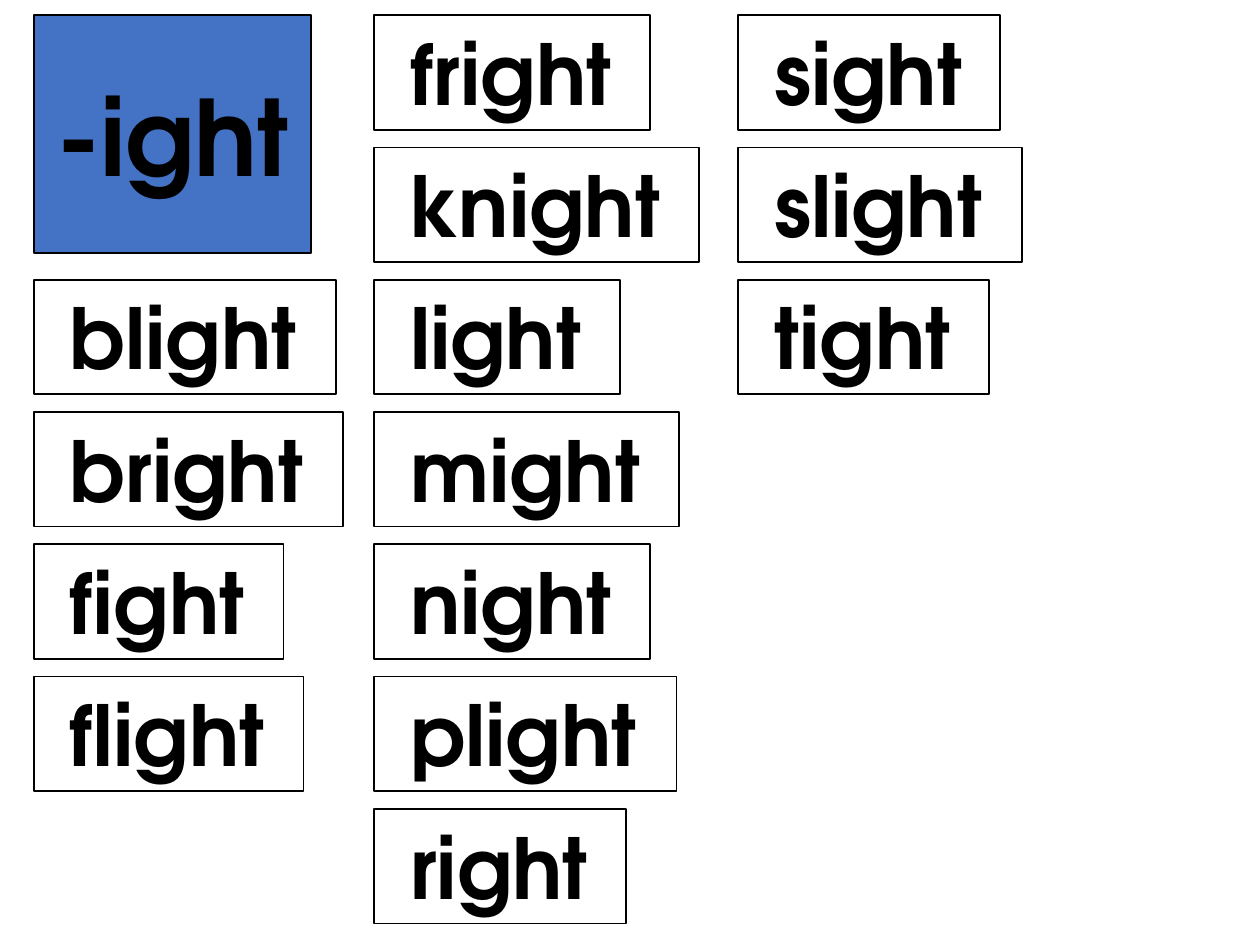
from dataclasses import dataclass

from pptx import Presentation
from pptx.dml.color import RGBColor
from pptx.enum import shapes, text
from pptx.util import Inches, Pt


@dataclass(frozen=True)
class Theme:
    font: str = "TeX Gyre Adventor"
    ink: str = "000000"
    card: str = "FFFFFF"
    accent: str = "4472C4"
    word_size: int = 48
    title_size: int = 60
    line_width: int = 1


THEME = Theme()

# Card grid, in inches
TOP, ROW_STEP, CARD_HEIGHT = 0.12, 1.05, 0.91
LEFT = 0.27

# Each column: left edge, first row, words with card widths
COLUMNS = [
    (5.86, 0, [("sight", 2.08), ("slight", 2.25), ("tight", 1.99)]),
    (2.97, 0, [("fright", 2.19), ("knight", 2.58), ("light", 1.95),
               ("might", 2.42), ("night", 2.19), ("plight", 2.4),
               ("right", 2)]),
    (LEFT, 2, [("blight", 2.4), ("bright", 2.45), ("fight", 1.98),
               ("flight", 2.14)]),
]


def set_text(sp, content, *, size, align, anchor, wrap, auto_size):
    tf = sp.text_frame
    tf.word_wrap = wrap
    tf.auto_size = auto_size
    tf.vertical_anchor = anchor
    p = tf.paragraphs[0]
    p.alignment = align
    r = p.add_run()
    r.text = content
    r.font.name = THEME.font
    r.font.size = Pt(size)
    r.font.bold = True
    r.font.color.rgb = RGBColor.from_string(THEME.ink)


def add_box(s, left, top, width, height, fill):
    sp = s.shapes.add_shape(shapes.MSO_SHAPE.RECTANGLE, Inches(left),
                            Inches(top), Inches(width), Inches(height))
    sp.shadow.inherit = False
    sp.fill.solid()
    sp.fill.fore_color.rgb = RGBColor.from_string(fill)
    sp.line.color.rgb = RGBColor.from_string(THEME.ink)
    sp.line.width = Pt(THEME.line_width)
    return sp


def add_word_card(s, word, left, row, width):
    sp = add_box(s, left, TOP + row * ROW_STEP, width, CARD_HEIGHT, THEME.card)
    # A no-break space insets the word
    set_text(sp, f" {word}", size=THEME.word_size, align=text.PP_ALIGN.LEFT,
             anchor=text.MSO_ANCHOR.TOP, wrap=False,
             auto_size=text.MSO_AUTO_SIZE.SHAPE_TO_FIT_TEXT)


def add_title_card(s, content):
    sp = add_box(s, LEFT, TOP, 2.2, 1.89, THEME.accent)
    set_text(sp, content, size=THEME.title_size, align=text.PP_ALIGN.CENTER,
             anchor=text.MSO_ANCHOR.MIDDLE, wrap=True,
             auto_size=text.MSO_AUTO_SIZE.NONE)


def main():
    prs = Presentation()
    prs.slide_width, prs.slide_height = Inches(10), Inches(7.5)
    s = prs.slides.add_slide(prs.slide_layouts[6])

    # Word cards
    for left, first_row, words in COLUMNS:
        for row, (word, width) in enumerate(words, first_row):
            add_word_card(s, word, left, row, width)

    # Word family card
    add_title_card(s, "-ight")

    prs.save("out.pptx")


if __name__ == "__main__":
    main()
